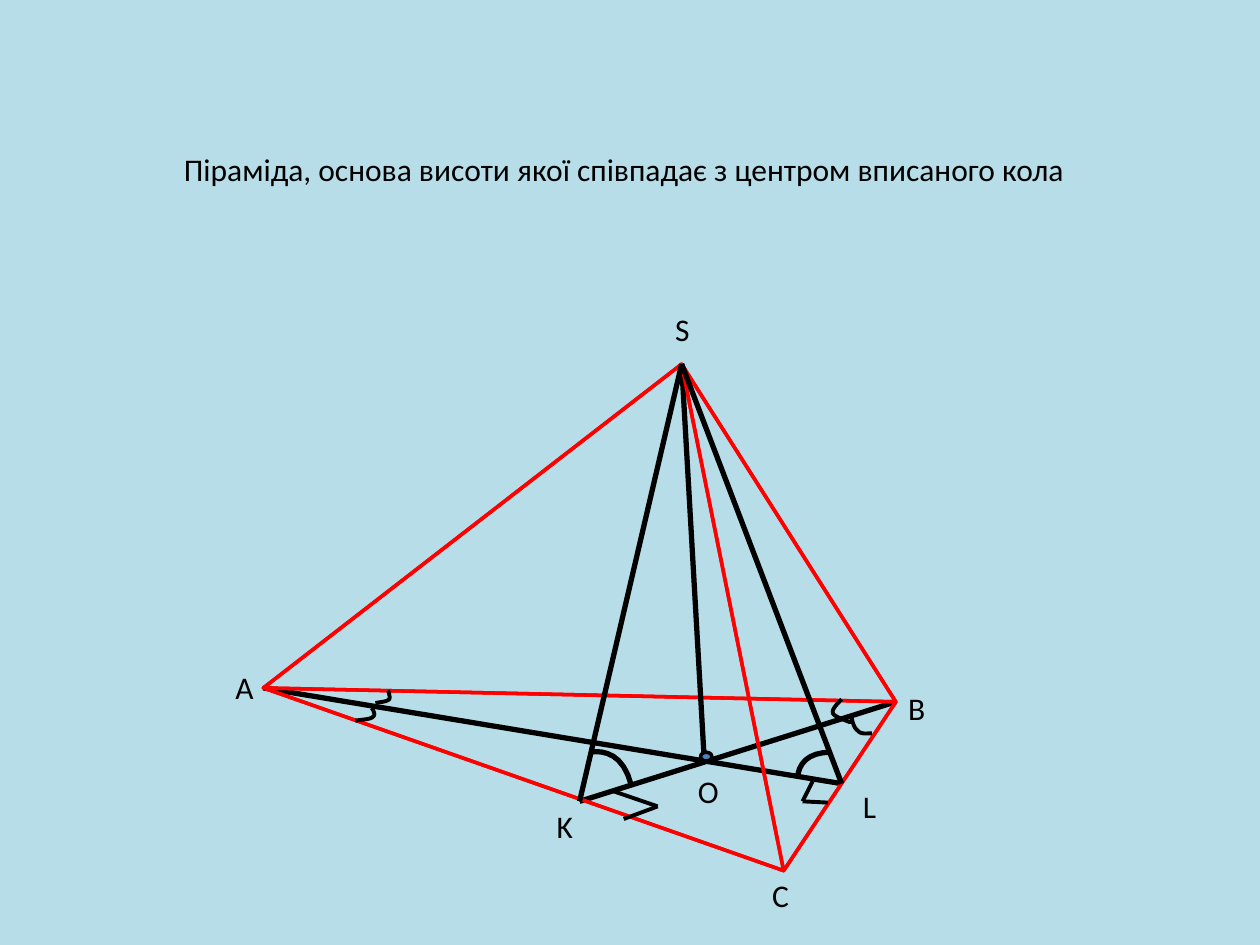
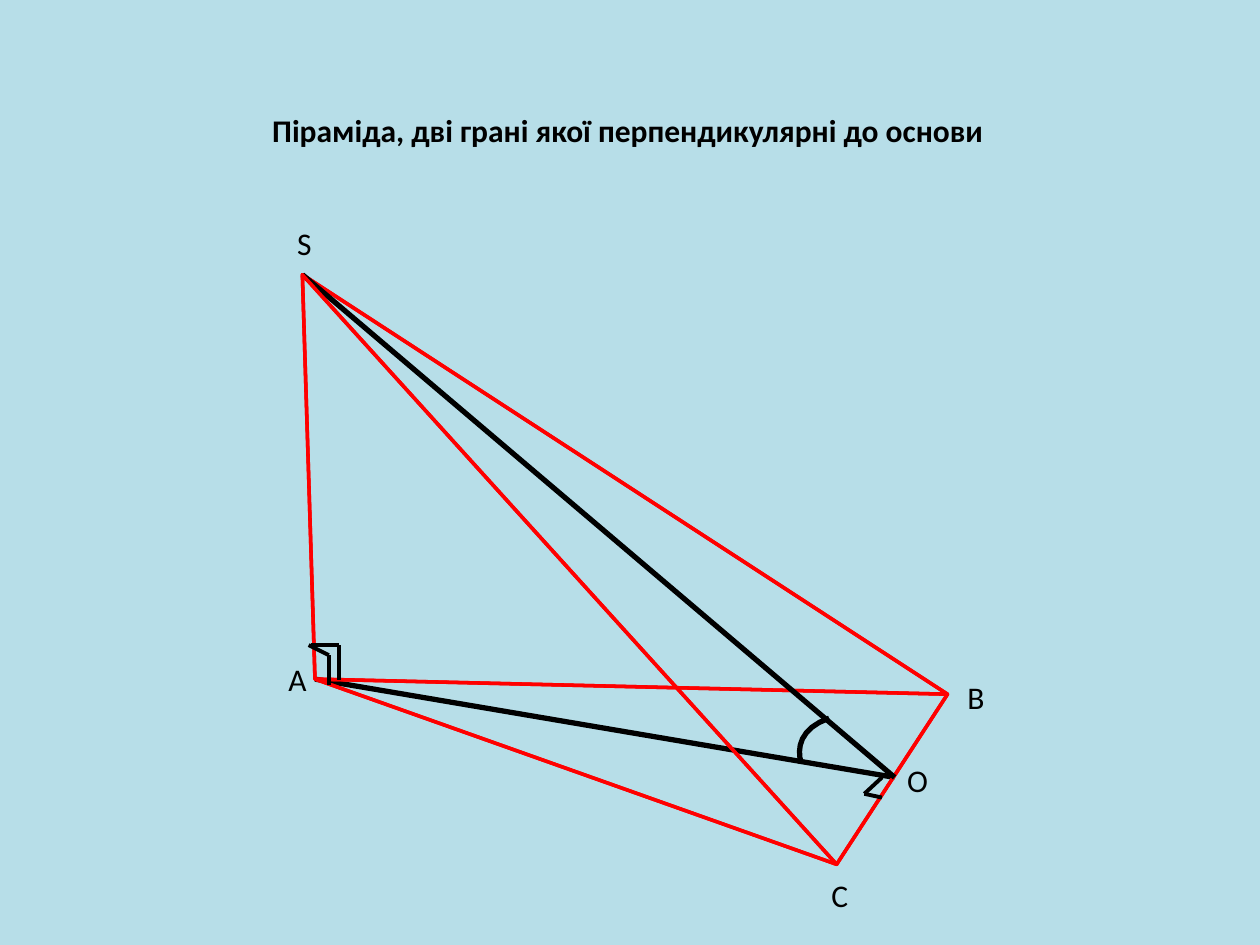
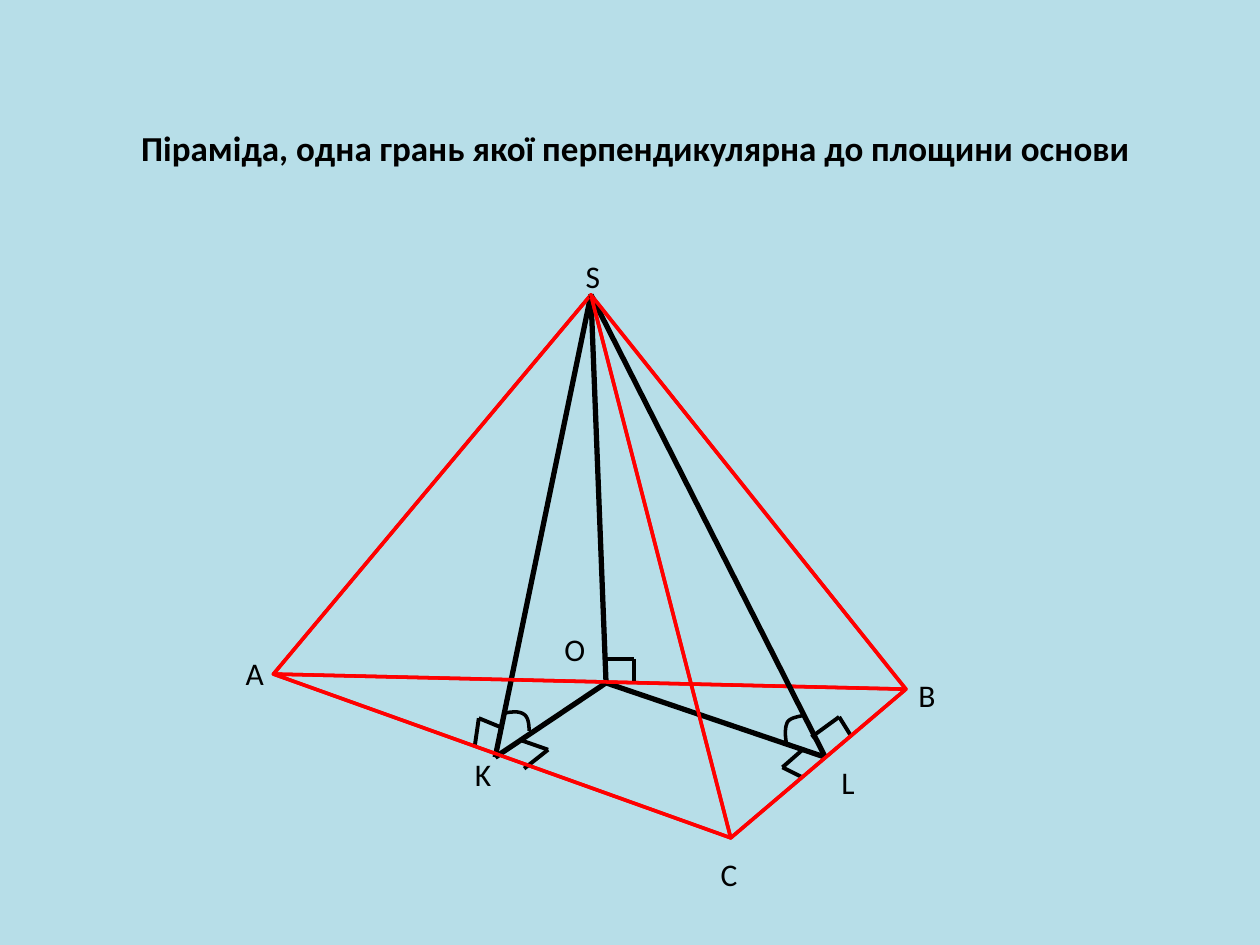
from itertools import pairwise

from lxml.etree import SubElement
from pptx import Presentation
from pptx.dml.color import RGBColor
from pptx.enum.shapes import MSO_CONNECTOR, MSO_SHAPE
from pptx.enum.text import MSO_ANCHOR, MSO_AUTO_SIZE, PP_ALIGN
from pptx.oxml.ns import qn
from pptx.util import Inches, Pt

SKY = RGBColor(0xB7, 0xDE, 0xE8)
RED = RGBColor(0xFF, 0x00, 0x00)
BLACK = RGBColor(0x00, 0x00, 0x00)
BLUE = RGBColor(0x4F, 0x81, 0xBD)
FONT = "Calibri"
COLS, ROWS = 100, 75
CELL = Inches(0.1)
STEPS = 8
BOLD, THIN, MARK = Pt(3), Pt(2), Pt(2.25)


def grid(*cells):
    """Turn grid cells into lengths."""
    return [round(cell * CELL) for cell in cells]


def style(para, size, bold=False):
    """Set the shared font of a paragraph."""
    font = para.font
    font.name, font.size, font.bold = FONT, Pt(size), bold
    font.color.rgb = BLACK


def bezier(ends):
    """List the points of a chain of cubic curves."""
    path = [ends[0]]
    for i in range(0, len(ends) - 1, 3):
        for step in range(1, STEPS + 1):
            t = step / STEPS
            share = ((1 - t) ** 3, 3 * t * (1 - t) ** 2, 3 * t * t * (1 - t), t ** 3)
            path.append(tuple(sum(w * p[axis] for w, p in zip(share, ends[i:i + 4]))
                              for axis in (0, 1)))
    return path


class Figure:
    """A pyramid drawn from named points inside a box of grid cells."""

    def __init__(self, slide, box, points):
        """Keep the slide, the corner of the box and the points."""
        self.shapes = slide.shapes
        self.left, self.top = box
        self.points = points

    def place(self, point):
        """Turn a point of the box into a place on the slide."""
        return grid(self.left + point[0], self.top + point[1])

    def line(self, start, end, width, shapes):
        """Draw a straight black line."""
        link = shapes.add_connector(MSO_CONNECTOR.STRAIGHT, *self.place(start), *self.place(end))
        link.line.color.rgb, link.line.width = BLACK, width
        SubElement(link._element.spPr, qn("a:effectLst"))

    def edge(self, names):
        """Join two named points."""
        start, end = names
        self.line(self.points[start], self.points[end], BOLD, self.shapes)

    def outline(self, path, color, width, close):
        """Draw an unfilled outline through the points."""
        first, *rest = [self.place(point) for point in path]
        pen = self.shapes.build_freeform(*first)
        pen.add_line_segments(rest, close=close)
        shape = pen.convert_to_shape()
        shape.shadow.inherit = False
        shape.fill.background()
        shape.line.color.rgb, shape.line.width = color, width

    def face(self, names):
        """Draw a red face through named points."""
        self.outline([self.points[name] for name in names], RED, THIN, True)

    def arc(self, *ends, width=BOLD):
        """Draw an angle arc."""
        self.outline(bezier(ends), BLACK, width, False)

    def corner(self, *path):
        """Draw a right-angle mark."""
        group = self.shapes.add_group_shape()
        for start, end in pairwise(path):
            self.line(start, end, MARK, group.shapes)

    def dot(self, name, wide, high):
        """Draw a dot at the foot of the height."""
        x, y = self.points[name]
        dot = self.shapes.add_shape(MSO_SHAPE.OVAL, *self.place((x - 0.3, y - 0.7)),
                                    *grid(wide, high))
        dot.shadow.inherit = False
        dot.fill.solid()
        dot.fill.fore_color.rgb = BLUE
        dot.line.color.rgb, dot.line.width = BLACK, THIN

    def label(self, **shifts):
        """Write the names of points, each shifted from its point."""
        for name, (dx, dy) in shifts.items():
            x, y = self.points[name]
            box = self.shapes.add_textbox(*self.place((x + dx, y + dy)), *grid(3.5, 4))
            frame = box.text_frame
            frame.word_wrap = False
            frame.text = name
            style(frame.paragraphs[0], 18)


def start(deck, text, box, size=18, bold=True, align=PP_ALIGN.CENTER):
    """Add a slide with its title in the given box."""
    slide = deck.slides.add_slide(deck.slide_layouts[5])
    title = slide.shapes.title
    title.left, title.top, title.width, title.height = grid(*box)
    frame = title.text_frame
    frame.text = text
    frame.word_wrap = True
    frame.auto_size = MSO_AUTO_SIZE.NONE
    frame.vertical_anchor = MSO_ANCHOR.TOP
    frame.paragraphs[0].alignment = align
    style(frame.paragraphs[0], size, bold)
    return slide


def circle(slide, box):
    """Draw the pyramid whose height meets the incircle's centre."""
    fig = Figure(slide, box, dict(A=(0.9, 29.6), B=(51.1, 30.7), C=(42.2, 44.1), S=(34.1, 3.9),
                                  K=(26, 38.6), L=(46.8, 37.2), O=(35.9, 35.4)))
    fig.edge("BK")
    fig.edge("LA")
    fig.arc((26.8, 34.7), (28, 34.5), (29.5, 34.9), (30.1, 37.3))
    fig.face("ASB")
    fig.face("ABC")
    fig.arc((43.3, 36.7), (43.4, 35.7), (44, 34.7), (46, 34.7))
    fig.face("CSB")
    fig.edge("SO")
    fig.face("ASC")
    fig.dot("O", 0.9, 0.7)
    fig.edge("SL")
    fig.edge("SK")
    fig.label(A=(-3.2, -2.1), S=(-1.5, -4.8), C=(-1.9, -0.1), B=(0, -1.5),
              O=(-1.5, 0.4), L=(0.7, -0.2), K=(-2.8, 0))
    fig.corner((28.7, 37.8), (32.2, 39), (29.5, 40))
    fig.corner((44.5, 37), (43.7, 38.6), (45.7, 38.7))
    fig.arc((47.6, 32), (47.7, 32.4), (47.8, 32.8), (48.1, 33),
            (48.3, 33.3), (48.9, 33.2), (49.2, 33.2), width=MARK)
    fig.arc((46.8, 30.5), (46.4, 30.9), (46, 31.3), (46.1, 31.6), (46.2, 31.9),
            (47.2, 32.2), (47.4, 32.3), (47.7, 32.3), (47.6, 32.2), (47.6, 32.1), width=MARK)
    fig.arc((9.8, 30.8), (10.3, 30.7), (10.7, 30.7), (10.9, 30.5),
            (11, 30.3), (10.8, 29.8), (10.8, 29.8), width=MARK)
    fig.arc((8.2, 32.2), (8.8, 32.1), (9.4, 32.1), (9.6, 31.9),
            (9.9, 31.7), (9.5, 31.2), (9.5, 31.2), width=MARK)


def pair(slide, box):
    """Draw the pyramid with two upright faces."""
    fig = Figure(slide, box, dict(A=(1, 32.9), B=(51.2, 34.1), C=(42.4, 47.6),
                                  S=(0, 0.8), O=(47, 40.7)))
    fig.edge("OA")
    fig.arc((39.6, 39.6), (39.2, 38.4), (39.5, 36.8), (41.8, 36))
    fig.face("ASB")
    fig.face("ABC")
    fig.face("CSB")
    fig.edge("SO")
    fig.face("ASC")
    fig.corner((2.1, 33.4), (2.1, 31), (0.5, 30.2))
    fig.corner((0.7, 30.2), (2.9, 30.2), (2.9, 33))
    fig.corner((46, 40.7), (44.6, 42), (46, 42.3))
    fig.label(A=(-3.1, -2), S=(-1.4, -4.5), C=(-1.4, 0.4), B=(0.6, -1.8), O=(0, -1.8))


def single(slide, box):
    """Draw the pyramid with one upright face."""
    fig = Figure(slide, box, dict(A=(0.7, 30.5), B=(50.9, 31.7), C=(37, 43.5), S=(25.9, 0.4),
                                  K=(18.3, 37.1), L=(44.5, 37.1), O=(27.1, 31.2)))
    fig.face("ASB")
    fig.edge("SK")
    fig.edge("SO")
    fig.face("ASC")
    fig.edge("LO")
    fig.edge("KO")
    fig.corner((42.7, 38.7), (41.1, 37.9), (42.7, 36.5))
    fig.corner((16.7, 36.1), (17, 34), (18.7, 34.7))
    fig.corner((43.4, 35.5), (45.6, 33.9), (46.6, 35.5))
    fig.corner((27.1, 29.3), (29.3, 29.3), (29.3, 31.2))
    fig.arc((19, 33.6), (19.6, 33.5), (20.2, 33.4), (20.6, 33.7),
            (20.9, 33.9), (21, 34.4), (21, 35), width=THIN)
    fig.arc((42.7, 33.8), (42.2, 33.9), (41.7, 34), (41.5, 34.3),
            (41.3, 34.7), (41.3, 35.3), (41.4, 35.9), width=THIN)
    fig.corner((20.2, 35.7), (22.5, 36.5), (20.6, 38))
    fig.label(A=(-3.2, -2.1), S=(-1.4, -3.5), C=(-1.8, 0.9), B=(0, -1.5),
              O=(-4.3, -4.7), L=(0.3, 0), K=(-2.6, -0.7))
    fig.face("ABC")
    fig.edge("SL")
    fig.face("CSB")


def main():
    """Build the deck and save it."""
    deck = Presentation()
    deck.slide_width, deck.slide_height = grid(COLS, ROWS)
    back = deck.slide_master.background.fill
    back.solid()
    back.fore_color.rgb = SKY
    circle(start(deck, "Піраміда, основа висоти якої співпадає з центром вписаного кола",
                 (13.6, 11.4, 72.7, 4), bold=False, align=PP_ALIGN.LEFT), (20, 25))
    pair(start(deck, "Піраміда, дві грані якої перпендикулярні до основи",
               (3.3, 8.3, 93.1, 4)), (24, 21))
    single(start(deck, "Піраміда, одна грань якої перпендикулярна до площини основи",
                 (2.8, 9.5, 95.3, 4.4), size=20), (21, 23))
    deck.save("out.pptx")


if __name__ == "__main__":
    main()
